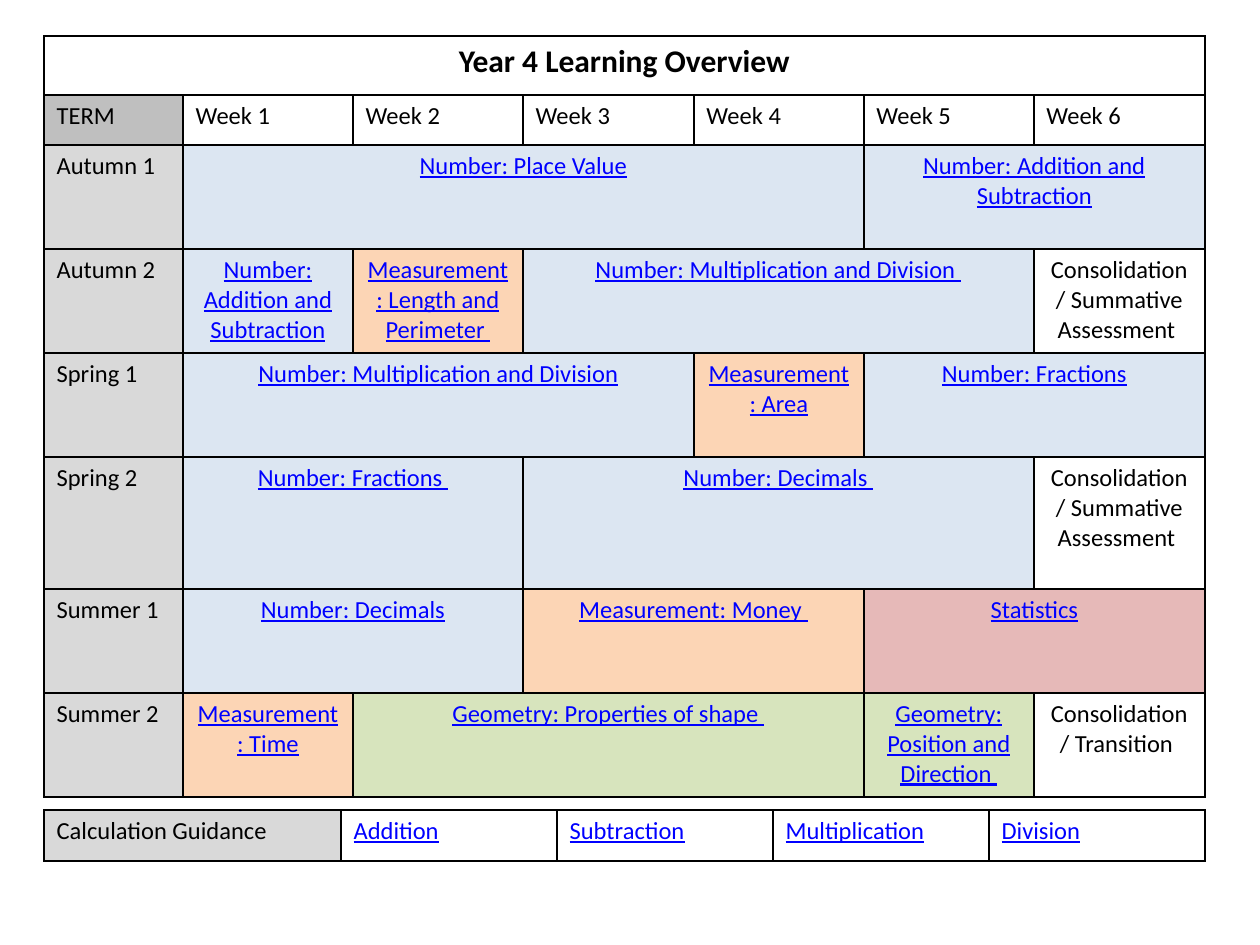
from lxml.etree import SubElement
from pptx import Presentation
from pptx.dml.color import RGBColor
from pptx.enum.text import PP_ALIGN
from pptx.oxml.ns import qn
from pptx.util import Pt

SCALE = 914400 / 126
COLORS = {
    "black": "000000", "link": "0000FF", "heading": "BFBFBF", "term": "D9D9D9",
    "number": "DCE6F2", "measurement": "FCD5B5", "geometry": "D7E4BD",
    "statistics": "E6B9B8",
}
FORMATS = {
    "title": {"size": Pt(18), "bold": True, "underline": False},
    "plain": {"size": Pt(14), "bold": False, "underline": False},
    "link": {"size": Pt(14), "bold": False, "underline": True},
}
LEFT = 44

# Each cell: text, columns spanned, fill, format, centred
def term(text):
    return text, 1, "term", "plain", False


def topic(text, weeks, fill="number"):
    return text, weeks, fill, "link", True


def consolidation(text):
    return text, 1, None, "plain", True


OVERVIEW = [
    [("Year 4 Learning Overview", 7, None, "title", True)],
    [("TERM", 1, "heading", "plain", False)]
    + [(f"Week {week}", 1, None, "plain", False) for week in range(1, 7)],
    [term("Autumn 1"), topic("Number: Place Value", 4),
     topic("Number: Addition and Subtraction", 2)],
    [term("Autumn 2"), topic("Number: Addition and Subtraction", 1),
     topic("Measurement: Length and Perimeter ", 1, "measurement"),
     topic("Number: Multiplication and Division ", 3),
     consolidation("Consolidation/ Summative Assessment ")],
    [term("Spring 1"), topic("Number: Multiplication and Division", 3),
     topic("Measurement: Area", 1, "measurement"), topic("Number: Fractions", 2)],
    [term("Spring 2"), topic("Number: Fractions ", 2), topic("Number: Decimals ", 3),
     consolidation("Consolidation/ Summative Assessment ")],
    [term("Summer 1"), topic("Number: Decimals", 2),
     topic("Measurement: Money ", 2, "measurement"), topic("Statistics", 2, "statistics")],
    [term("Summer 2"), topic("Measurement: Time", 1, "measurement"),
     topic("Geometry: Properties of shape ", 3, "geometry"),
     topic("Geometry: Position and Direction ", 1, "geometry"),
     consolidation("Consolidation/ Transition ")],
]
GUIDANCE = [
    [term("Calculation Guidance")]
    + [(name, 1, None, "link", False)
       for name in ("Addition", "Subtraction", "Multiplication", "Division")],
]
TABLES = [
    (OVERVIEW, 36, [139] + [170, 170, 171] * 2, [59, 50, 104, 104, 104, 132, 104, 104]),
    (GUIDANCE, 810, [297] + [216] * 4, [51]),
]


def px(length):
    return round(length * SCALE)


def add_borders(cell):
    properties = cell._tc.get_or_add_tcPr()
    for position, side in enumerate(("a:lnL", "a:lnR", "a:lnT", "a:lnB")):
        line = SubElement(properties, qn(side), w=str(Pt(1)))
        color = SubElement(SubElement(line, qn("a:solidFill")), qn("a:srgbClr"))
        color.set("val", COLORS["black"])
        properties.insert(position, line)


def fill_cell(cell, text, fill, style, centred):
    if fill:
        cell.fill.solid()
        cell.fill.fore_color.rgb = RGBColor.from_string(COLORS[fill])
    paragraph = cell.text_frame.paragraphs[0]
    paragraph.alignment = PP_ALIGN.CENTER if centred else PP_ALIGN.LEFT
    run = paragraph.add_run()
    run.text = text
    run.font.name = "Calibri"
    run.font.color.rgb = RGBColor.from_string(COLORS["link" if style == "link" else "black"])
    for name, value in FORMATS[style].items():
        setattr(run.font, name, value)


def add_grid(slide, content, top, widths, heights):
    table = slide.shapes.add_table(
        len(heights), len(widths), px(LEFT), px(top), px(sum(widths)), px(sum(heights))
    ).table
    table.first_row = False
    table.horz_banding = False
    for column, width in zip(table.columns, widths):
        column.width = px(width)
    for row, height in zip(table.rows, heights):
        row.height = px(height)
    for cell in table.iter_cells():
        cell.fill.background()
        add_borders(cell)
    for row_index, row_content in enumerate(content):
        column_index = 0
        for text, span, fill, style, centred in row_content:
            cell = table.cell(row_index, column_index)
            if span > 1:
                cell.merge(table.cell(row_index, column_index + span - 1))
            fill_cell(cell, text, fill, style, centred)
            column_index += span


def main():
    presentation = Presentation()
    presentation.slide_width = px(1260)
    presentation.slide_height = px(945)
    slide = presentation.slides.add_slide(presentation.slide_layouts[6])
    for content, top, widths, heights in TABLES:
        add_grid(slide, content, top, widths, heights)
    presentation.save("out.pptx")


if __name__ == "__main__":
    main()
